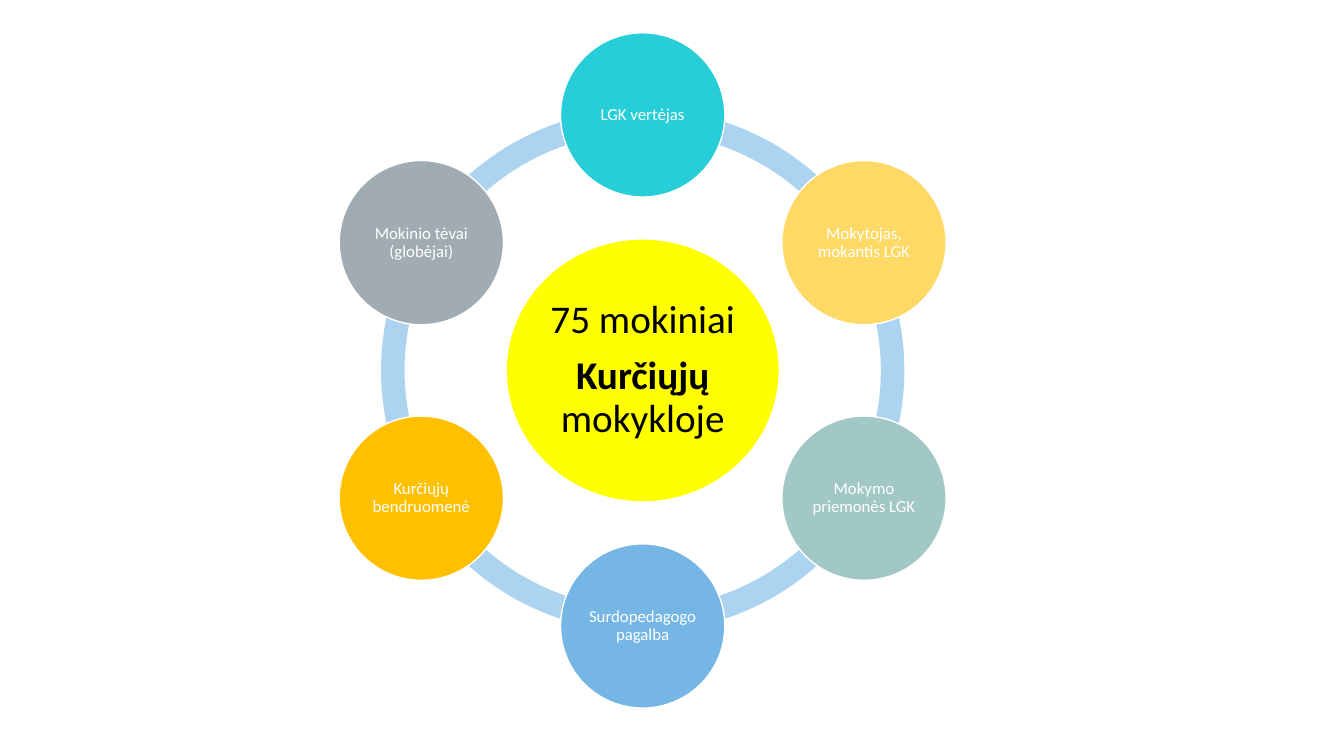
from dataclasses import dataclass
from math import cos, radians, sin

from pptx import Presentation
from pptx.dml.color import RGBColor
from pptx.enum.shapes import MSO_SHAPE
from pptx.enum.text import MSO_ANCHOR, PP_ALIGN
from pptx.util import Inches, Pt

ELLIPSE = MSO_SHAPE.OVAL
BLOCK_ARC = MSO_SHAPE.BLOCK_ARC
MIDDLE = MSO_ANCHOR.MIDDLE
CENTER = PP_ALIGN.CENTER

SLIDE_WIDTH = Inches(13.33)
SLIDE_HEIGHT = Inches(7.5)
PERCENT = SLIDE_HEIGHT / 100

# Diagram centre as shares of the slide; the other lengths are percent of its height.
CENTER_X = SLIDE_WIDTH * 0.4782
CENTER_Y = SLIDE_HEIGHT * 0.49
RING_SIZE = 69.2
ORBIT_RADIUS = 33.8
HUB_WIDTH, HUB_HEIGHT = 36.13, 34.8
SATELLITE_SIZE = 21.73
RING_THICKNESS = 0.045
ANGLE_UNIT = 0.6  # arc adjustment per degree
TOP_ANGLE = 270


@dataclass(frozen=True)
class Theme:
    font: str = "Calibri"
    ring: str = "ACD3EF"
    hub: str = "FFFF00"
    hub_text: str = "000000"
    light: str = "FFFFFF"
    hub_size: int = 28
    satellite_size: int = 12


THEME = Theme()

HUB_TEXT = [[("75 mokiniai", False)], [("Kurčiųjų", True), (" mokykloje", False)]]
SATELLITES = [
    ("LGK vertėjas", "27CED7"),
    ("Mokytojas, mokantis LGK", "FFD966"),
    ("Mokymo priemonės LGK", "A1C8C5"),
    ("Surdopedagogo pagalba", "75B6E5"),
    ("Kurčiųjų bendruomenė", "FFC000"),
    ("Mokinio tėvai (globėjai)", "A1ACB2"),
]


def add_centered_shape(slide, kind, x, y, width, height, color):
    """Add a filled shape around (x, y), its size in percent of slide height."""
    width, height = width * PERCENT, height * PERCENT
    shape = slide.shapes.add_shape(
        kind, round(x - width / 2), round(y - height / 2), round(width), round(height)
    )
    shape.shadow.inherit = False
    shape.fill.solid()
    shape.fill.fore_color.rgb = RGBColor.from_string(color)
    return shape


def add_ring_segment(slide, start, end):
    arc = add_centered_shape(
        slide, BLOCK_ARC, CENTER_X, CENTER_Y, RING_SIZE, RING_SIZE, THEME.ring
    )
    arc.line.fill.background()
    for index, value in enumerate((start * ANGLE_UNIT, end * ANGLE_UNIT, RING_THICKNESS)):
        arc.adjustments[index] = value


def add_circle(slide, x, y, width, height, color):
    circle = add_centered_shape(slide, ELLIPSE, x, y, width, height, color)
    circle.line.color.rgb = RGBColor.from_string(THEME.light)
    circle.line.width = Pt(1)
    return circle


def write_text(shape, paragraphs, size, color, inset):
    """Fill a shape with paragraphs, each a list of (words, bold) pairs."""
    frame = shape.text_frame
    frame.word_wrap = True
    frame.vertical_anchor = MIDDLE
    frame.margin_left = frame.margin_right = Inches(inset)
    frame.margin_top = frame.margin_bottom = Inches(inset)
    for index, pieces in enumerate(paragraphs):
        para = frame.add_paragraph() if index else frame.paragraphs[0]
        para.alignment = CENTER
        para.line_spacing = 0.9
        para.space_after = Pt(size * 0.35)
        for words, bold in pieces:
            span = para.add_run()
            span.text = words
            span.font.name = THEME.font
            span.font.size = Pt(size)
            span.font.bold = bold
            span.font.color.rgb = RGBColor.from_string(color)


def add_hub(slide):
    hub = add_circle(slide, CENTER_X, CENTER_Y, HUB_WIDTH, HUB_HEIGHT, THEME.hub)
    write_text(hub, HUB_TEXT, THEME.hub_size, THEME.hub_text, 0.04)


def add_satellite(slide, label, color, angle):
    x = CENTER_X + ORBIT_RADIUS * PERCENT * cos(radians(angle))
    y = CENTER_Y + ORBIT_RADIUS * PERCENT * sin(radians(angle))
    circle = add_circle(slide, x, y, SATELLITE_SIZE, SATELLITE_SIZE, color)
    write_text(circle, [[(label, False)]], THEME.satellite_size, THEME.light, 0.02)


def main():
    deck = Presentation()
    deck.slide_width, deck.slide_height = SLIDE_WIDTH, SLIDE_HEIGHT
    blank_layout = deck.slide_layouts[6]
    page = deck.slides.add_slide(blank_layout)

    step = 360 // len(SATELLITES)
    angles = [(TOP_ANGLE + step * index) % 360 for index in range(len(SATELLITES))]
    for angle in angles:
        add_ring_segment(page, angle, (angle + step) % 360)
    add_hub(page)
    for (label, color), angle in zip(SATELLITES, angles):
        add_satellite(page, label, color, angle)

    deck.save("out.pptx")


if __name__ == "__main__":
    main()
